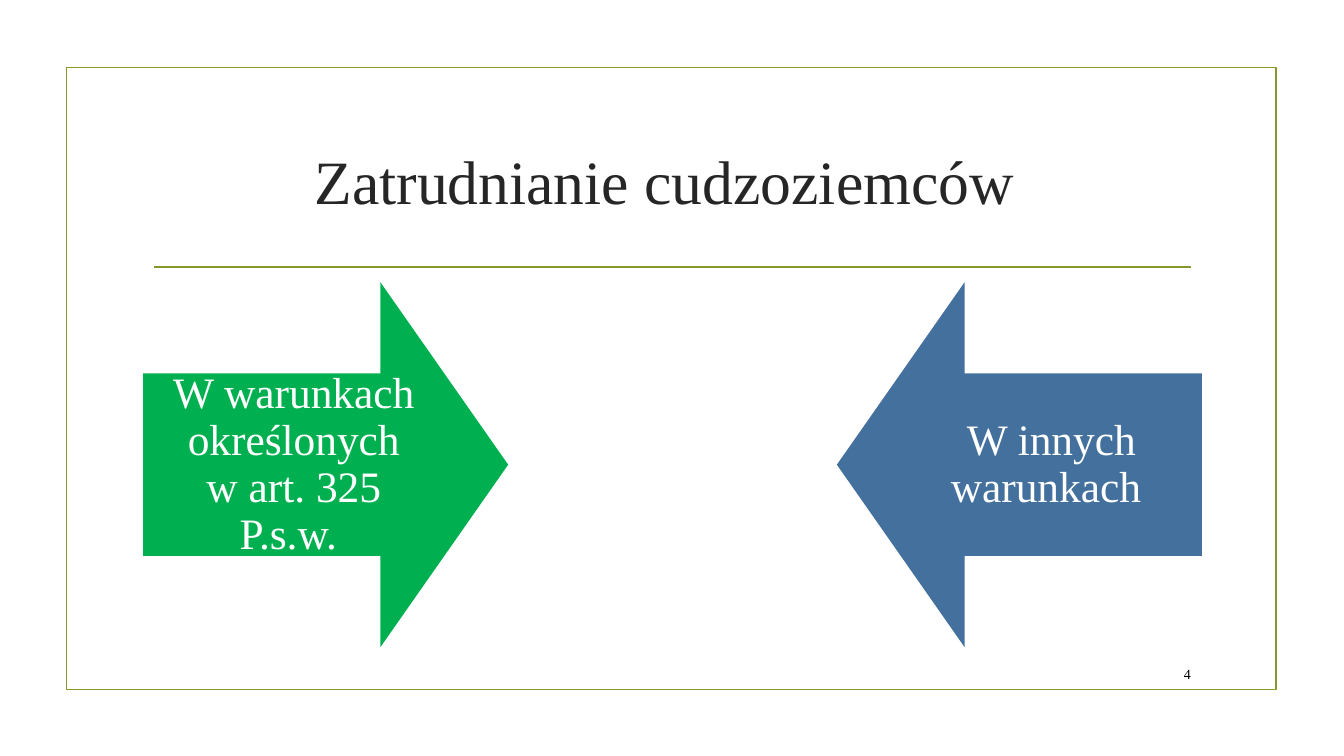
from pptx import Presentation
from pptx.dml.color import RGBColor
from pptx.enum import shapes, text
from pptx.oxml.ns import qn
from pptx.util import Inches, Pt
from lxml import etree

OLIVE = RGBColor(0x83, 0x99, 0x2A)
GREEN = RGBColor(0x00, 0xB0, 0x50)
BLUE = RGBColor(0x44, 0x70, 0x9D)
WHITE = RGBColor(0xFF, 0xFF, 0xFF)
DARK = RGBColor(0x26, 0x26, 0x26)
BLACK = RGBColor(0, 0, 0)
FONT = "Times New Roman"

# Content
TITLE = "Zatrudnianie cudzoziemców "
PAGE = "4"
ARROWS = [
    ("W warunkach określonych w art. 325 P.s.w. ", GREEN, shapes.MSO_SHAPE.RIGHT_ARROW),
    ("W innych warunkach ", BLUE, shapes.MSO_SHAPE.LEFT_ARROW),
]

# Layout in inches
WIDTH, HEIGHT = 13.33, 7.5
LEFT, BODY_W = 1.42, 10.5
ARROW_TOP, ARROW_SIZE = 2.8, 3.62
RULE_Y, RULE_INSET = 2.65, 0.11
INSET = 0.24


def box(*lengths):
    return [Inches(v) for v in lengths]


def write(sp, words, size, color, align=text.PP_ALIGN.CENTER, inset=None, spacing=None):
    tf = sp.text_frame
    tf.word_wrap = True
    tf.auto_size = text.MSO_AUTO_SIZE.NONE
    tf.vertical_anchor = text.MSO_ANCHOR.MIDDLE
    if inset is not None:
        tf.margin_left = tf.margin_right = Inches(inset)
        tf.margin_top = tf.margin_bottom = Inches(inset)
    p = tf.paragraphs[0]
    p.alignment = align
    if spacing:
        p.line_spacing = spacing
    r = p.add_run()
    r.text = words
    r.font.name, r.font.size, r.font.color.rgb = FONT, Pt(size), color


prs = Presentation()
prs.slide_width, prs.slide_height = box(WIDTH, HEIGHT)
s = prs.slides.add_slide(prs.slide_layouts[5])

# Frame
frame = s.shapes.add_shape(shapes.MSO_SHAPE.RECTANGLE, *box(0.66, 0.67, 12, 6.17))
frame.shadow.inherit = False
frame.fill.background()
frame.line.color.rgb, frame.line.width = OLIVE, Pt(1.25)

# Rule under the title
rule = s.shapes.add_connector(
    shapes.MSO_CONNECTOR.STRAIGHT,
    *box(LEFT + RULE_INSET, RULE_Y, LEFT + BODY_W - RULE_INSET, RULE_Y))
rule.line.color.rgb, rule.line.width = OLIVE, Pt(1.25)
etree.SubElement(rule._element.spPr, qn("a:effectLst"))

# Title
title = s.shapes.title
title.left, title.top, title.width, title.height = box(LEFT, 1.07, BODY_W, 1.43)
write(title, TITLE, 44, DARK)

# Facing arrows at both ends of the body
step = (BODY_W - ARROW_SIZE) / (len(ARROWS) - 1)
for i, (words, color, kind) in enumerate(ARROWS):
    arrow = s.shapes.add_shape(
        kind, *box(LEFT + i * step, ARROW_TOP, ARROW_SIZE, ARROW_SIZE))
    arrow.adjustments[0], arrow.adjustments[1] = 0.5, 0.35
    arrow.shadow.inherit = False
    arrow.fill.solid()
    arrow.fill.fore_color.rgb = color
    arrow.line.fill.background()
    write(arrow, words, 31, WHITE, inset=INSET, spacing=0.9)

# Page number
number = s.shapes.add_textbox(*box(11.32, 6.53, 0.59, 0.31))
write(number, PAGE, 10, BLACK, align=text.PP_ALIGN.RIGHT)

prs.save("out.pptx")
